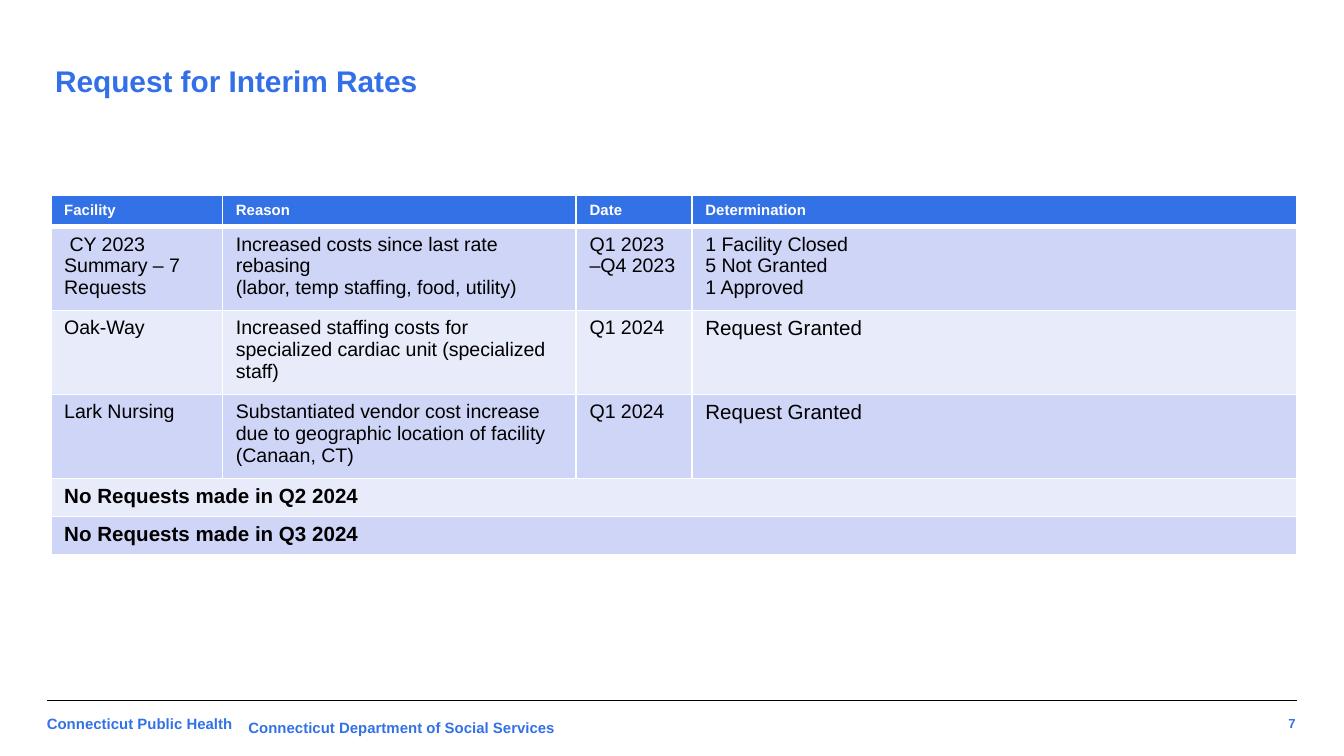
from dataclasses import dataclass

from lxml import etree
from pptx import Presentation
from pptx.dml.color import RGBColor
from pptx.enum.shapes import MSO_CONNECTOR
from pptx.enum.text import MSO_ANCHOR, PP_ALIGN
from pptx.oxml.ns import qn
from pptx.util import Pt

LEFT, RIGHT = PP_ALIGN.LEFT, PP_ALIGN.RIGHT
TOP, MIDDLE = MSO_ANCHOR.TOP, MSO_ANCHOR.MIDDLE
STRAIGHT = MSO_CONNECTOR.STRAIGHT

BLUE = RGBColor(0x33, 0x71, 0xE7)
TITLE_BLUE = RGBColor(0x33, 0x70, 0xE8)
DARK_BAND = RGBColor(0xCE, 0xD5, 0xF6)
LIGHT_BAND = RGBColor(0xE8, 0xEB, 0xFA)
WHITE = RGBColor(0xFF, 0xFF, 0xFF)
BLACK = RGBColor(0, 0, 0)

FONT = "Arial"
INSET = 7.2
THIN, THICK = 1, 3


@dataclass(frozen=True)
class Style:
    size: float
    color: RGBColor
    bold: bool = False


@dataclass(frozen=True)
class Label:
    text: str
    left: float
    top: float
    width: float
    height: float
    style: Style
    inset_top: float = INSET
    align: PP_ALIGN = LEFT
    anchor: MSO_ANCHOR = TOP


@dataclass(frozen=True)
class Row:
    height: float
    texts: tuple[str, ...]
    style: Style
    last_size: float


HEADER = Style(8, WHITE, True)
BODY = Style(10.5, BLACK)
NOTICE = Style(11, BLACK, True)
FOOTER = Style(8, BLUE, True)
TITLE = Style(16, TITLE_BLUE, True)

LABELS = (
    Label("7", 658, 378.7, 43.2, 18, Style(7, BLUE, True), align=RIGHT, anchor=MIDDLE),
    Label("Connecticut Public Health", 18, 378, 236, 24.5, FOOTER),
    Label("Connecticut Department of Social Services", 126, 381.6, 191, 17, FOOTER, 3.6),
)

TABLE_LEFT, TABLE_TOP = 27.2, 104.6
COLUMN_WIDTHS = (92, 189.5, 62, 324)
ROWS = (
    Row(16.5, ("Facility", "Reason", "Date", "Determination"), HEADER, 8),
    Row(45, (
        " CY 2023 Summary – 7 Requests",
        "Increased costs since last rate rebasing\n(labor, temp staffing, food, utility)",
        "Q1 2023 –Q4 2023",
        "1 Facility Closed\n5 Not Granted\n1 Approved",
    ), BODY, 10.5),
    Row(45, (
        "Oak-Way",
        "Increased staffing costs for specialized cardiac unit (specialized staff)",
        "Q1 2024",
        "Request Granted",
    ), BODY, 11),
    Row(45, (
        "Lark Nursing",
        "Substantiated vendor cost increase due to geographic location of facility (Canaan, CT)",
        "Q1 2024",
        "Request Granted",
    ), BODY, 11),
    Row(20.4, ("No Requests made in Q2 2024",), NOTICE, 11),
    Row(20.4, ("No Requests made in Q3 2024",), NOTICE, 11),
)


def write_text(frame, text: str, style: Style, align: PP_ALIGN = LEFT) -> None:
    frame.text = text
    for para in frame.paragraphs:
        para.alignment = align
        for span in para.runs:
            span.font.name = FONT
            span.font.size = Pt(style.size)
            span.font.bold = style.bold
            span.font.color.rgb = style.color


def set_insets(frame, vertical: float) -> None:
    frame.margin_left = frame.margin_right = Pt(INSET)
    frame.margin_top = frame.margin_bottom = Pt(vertical)


def add_label(page, label: Label) -> None:
    box = page.shapes.add_textbox(
        Pt(label.left), Pt(label.top), Pt(label.width), Pt(label.height)
    )
    frame = box.text_frame
    frame.word_wrap = True
    frame.vertical_anchor = label.anchor
    set_insets(frame, label.inset_top)
    write_text(frame, label.text, label.style, label.align)


def add_title(page, text: str) -> None:
    title = page.shapes.title
    title.left, title.top, title.width, title.height = Pt(22.3), Pt(31), Pt(671), Pt(24)
    title.text_frame.vertical_anchor = MIDDLE
    set_insets(title.text_frame, INSET)
    write_text(title.text_frame, text, TITLE)


def add_footer_rule(page) -> None:
    rule = page.shapes.add_connector(STRAIGHT, Pt(25.2), Pt(375.2), Pt(694.8), Pt(375.2))
    rule.line.color.rgb = BLACK
    rule.line.width = Pt(0.75)
    etree.SubElement(rule._element.spPr, qn("a:effectLst"))


def set_borders(cell, top: float, bottom: float) -> None:
    properties = cell._tc.get_or_add_tcPr()
    widths = {"a:lnL": THIN, "a:lnR": THIN, "a:lnT": top, "a:lnB": bottom}
    for tag, width in widths.items():
        border = etree.SubElement(properties, qn(tag), w=str(Pt(width)))
        fill = etree.SubElement(border, qn("a:solidFill"))
        etree.SubElement(fill, qn("a:srgbClr"), val=str(WHITE))


def row_fill(index: int) -> RGBColor:
    if index == 0:
        return BLUE
    return DARK_BAND if index % 2 else LIGHT_BAND


def add_requests_table(page) -> None:
    last_column = len(COLUMN_WIDTHS) - 1
    table = page.shapes.add_table(
        len(ROWS), len(COLUMN_WIDTHS), Pt(TABLE_LEFT), Pt(TABLE_TOP),
        Pt(sum(COLUMN_WIDTHS)), Pt(sum(row.height for row in ROWS)),
    ).table
    for column, width in zip(table.columns, COLUMN_WIDTHS):
        column.width = Pt(width)
    for index, row in enumerate(ROWS):
        table.rows[index].height = Pt(row.height)
        for cell in table.rows[index].cells:
            set_borders(cell, THICK if index == 1 else THIN, THICK if index == 0 else THIN)
            cell.fill.solid()
            cell.fill.fore_color.rgb = row_fill(index)
        for column, text in enumerate(row.texts):
            size = row.last_size if column == last_column else row.style.size
            style = Style(size, row.style.color, row.style.bold)
            write_text(table.cell(index, column).text_frame, text, style)
        if len(row.texts) == 1:
            table.cell(index, 0).merge(table.cell(index, last_column))


def main() -> None:
    deck = Presentation()
    deck.slide_width, deck.slide_height = Pt(720), Pt(405)
    page = deck.slides.add_slide(deck.slide_layouts[5])
    add_title(page, "Request for Interim Rates")
    add_footer_rule(page)
    for label in LABELS:
        add_label(page, label)
    add_requests_table(page)
    deck.save("out.pptx")


if __name__ == "__main__":
    main()
